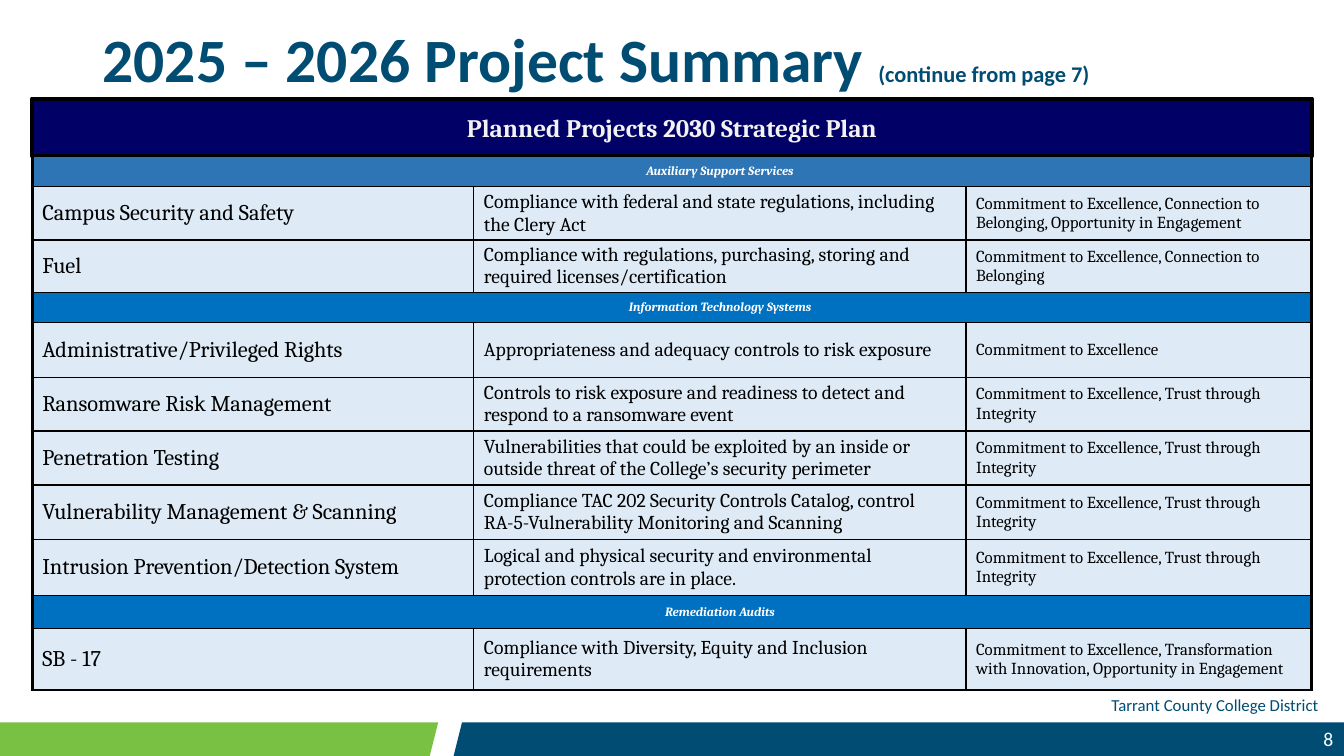
from pptx import Presentation
from pptx.dml.color import RGBColor
from pptx.enum.shapes import MSO_SHAPE
from pptx.enum.text import MSO_ANCHOR, PP_ALIGN
from pptx.oxml.ns import qn
from pptx.util import Pt
from lxml.etree import SubElement

NAVY = RGBColor(0x00, 0x4C, 0x72)
GREEN = RGBColor(0x79, 0xC1, 0x43)
BANNER = RGBColor(0x00, 0x00, 0x66)
STEEL = RGBColor(0x2E, 0x75, 0xB6)
BLUE = RGBColor(0x00, 0x70, 0xC0)
PALE = RGBColor(0xDE, 0xEB, 0xF7)
OFF_WHITE = RGBColor(0xF2, 0xF2, 0xF2)
WHITE = RGBColor(0xFF, 0xFF, 0xFF)
BLACK = RGBColor(0x00, 0x00, 0x00)

THIN, THICK = 1, 2.25
TRUST = "Commitment to Excellence, Trust through Integrity"
ROWS = [
    (22, STEEL, ["Auxiliary Support Services"]),
    (38, PALE, ["Campus Security and Safety",
                "Compliance with federal and state regulations, including the Clery Act",
                "Commitment to Excellence, Connection to Belonging, Opportunity in Engagement"]),
    (37.5, PALE, ["Fuel",
                  "Compliance with regulations, purchasing, storing and required licenses/certification",
                  "Commitment to Excellence, Connection to Belonging"]),
    (21.5, BLUE, ["Information Technology Systems"]),
    (39, PALE, ["Administrative/Privileged Rights",
                "Appropriateness and adequacy controls to risk exposure",
                "Commitment to Excellence"]),
    (38.5, PALE, ["Ransomware Risk Management",
                  "Controls to risk exposure and readiness to detect and respond to a ransomware event",
                  TRUST]),
    (38.5, PALE, ["Penetration Testing",
                  "Vulnerabilities that could be exploited by an inside or outside threat of the "
                  "College’s security perimeter",
                  TRUST]),
    (39, PALE, ["Vulnerability Management & Scanning",
                "Compliance TAC 202 Security Controls Catalog, control RA-5-Vulnerability "
                "Monitoring and Scanning",
                TRUST]),
    (40, PALE, ["Intrusion Prevention/Detection System",
                "Logical and physical security and environmental protection controls are in place.",
                TRUST]),
    (23.5, BLUE, ["Remediation Audits"]),
    (44, PALE, ["SB - 17",
                "Compliance with Diversity, Equity and Inclusion requirements",
                "Commitment to Excellence, Transformation with Innovation, Opportunity in Engagement"]),
]


def set_font(font, name, size, color, bold=False, italic=False):
    font.name = name
    font.size = Pt(size)
    font.color.rgb = color
    font.bold = bold
    font.italic = italic


def set_border(cell, side, width):
    line = SubElement(cell._tc.get_or_add_tcPr(), qn(f"a:ln{side}"), w=str(Pt(width)))
    if width:
        fill = SubElement(line, qn("a:solidFill"))
        SubElement(fill, qn("a:srgbClr"), val=str(BLACK))
    else:
        SubElement(line, qn("a:noFill"))


presentation = Presentation()
presentation.slide_width = Pt(960)
presentation.slide_height = Pt(540)
slide = presentation.slides.add_slide(presentation.slide_layouts[5])

for color, corners in [
    (NAVY, [(330, 516), (960, 516), (960, 540), (324, 540)]),
    (GREEN, [(313, 516), (307, 540), (0, 540), (0, 516)]),
]:
    points = [(Pt(x), Pt(y)) for x, y in corners]
    builder = slide.shapes.build_freeform(*points[0])
    builder.add_line_segments(points[1:], close=True)
    footer_band = builder.convert_to_shape()
    footer_band.shadow.inherit = False
    footer_band.fill.solid()
    footer_band.fill.fore_color.rgb = color
    footer_band.line.fill.background()

title = slide.shapes.title
title.left, title.top, title.width, title.height = Pt(66), Pt(19), Pt(828), Pt(52)
title.text_frame.word_wrap = True
title.text_frame.vertical_anchor = MSO_ANCHOR.MIDDLE
paragraph = title.text_frame.paragraphs[0]
paragraph.alignment = PP_ALIGN.LEFT
paragraph.line_spacing = 0.9
for text, size in [("2025 – 2026 Project Summary ", 44), ("(continue from page 7)", 16)]:
    run = paragraph.add_run()
    run.text = text
    set_font(run.font, "Calibri", size, NAVY, bold=True)

for text, left, top, width, height, size, color in [
    ("Tarrant County College District", 625, 493, 324, 29, 12, NAVY),
    ("8", 893.5, 516, 66, 24, 14, WHITE),
]:
    text_box = slide.shapes.add_textbox(Pt(left), Pt(top), Pt(width), Pt(height))
    text_box.text_frame.word_wrap = True
    paragraph = text_box.text_frame.paragraphs[0]
    paragraph.text = text
    paragraph.alignment = PP_ALIGN.RIGHT
    set_font(paragraph.font, "Calibri", size, color)

banner = slide.shapes.add_shape(MSO_SHAPE.RECTANGLE, Pt(23), Pt(70.5), Pt(914), Pt(41))
banner.shadow.inherit = False
banner.fill.solid()
banner.fill.fore_color.rgb = BANNER
banner.line.color.rgb = BLACK
banner.line.width = Pt(3)
banner.text_frame.vertical_anchor = MSO_ANCHOR.MIDDLE
paragraph = banner.text_frame.paragraphs[0]
paragraph.text = "Planned Projects 2030 Strategic Plan"
paragraph.alignment = PP_ALIGN.CENTER
set_font(paragraph.font, "Cambria", 18, OFF_WHITE, bold=True)

table_height = sum(height for height, _, _ in ROWS)
table = slide.shapes.add_table(len(ROWS), 3, Pt(23), Pt(111.5), Pt(914), Pt(table_height)).table
table.first_row = False
table.horz_banding = False
for column, width in zip(table.columns, [315.5, 351.5, 247]):
    column.width = Pt(width)

for row, (height, color, texts) in zip(table.rows, ROWS):
    row.height = Pt(height)
    is_section = len(texts) == 1
    if is_section:
        texts = ["", texts[0], ""]
        verticals = [THICK, 0, 0, THICK]
    else:
        verticals = [THICK, THIN, THICK, THICK]
    for index, (cell, text) in enumerate(zip(row.cells, texts)):
        cell.margin_top = cell.margin_bottom = 0
        cell.vertical_anchor = MSO_ANCHOR.MIDDLE
        borders = {"L": verticals[index], "R": verticals[index + 1], "T": THIN, "B": THIN}
        for side, width in borders.items():
            set_border(cell, side, width)
        cell.fill.solid()
        cell.fill.fore_color.rgb = color
        paragraph = cell.text_frame.paragraphs[0]
        paragraph.text = text
        if is_section:
            paragraph.alignment = PP_ALIGN.CENTER
            set_font(paragraph.font, "Cambria", 9, WHITE, bold=True, italic=True)
        else:
            set_font(paragraph.font, "Cambria", [16, 14, 12][index], BLACK)

presentation.save("out.pptx")
